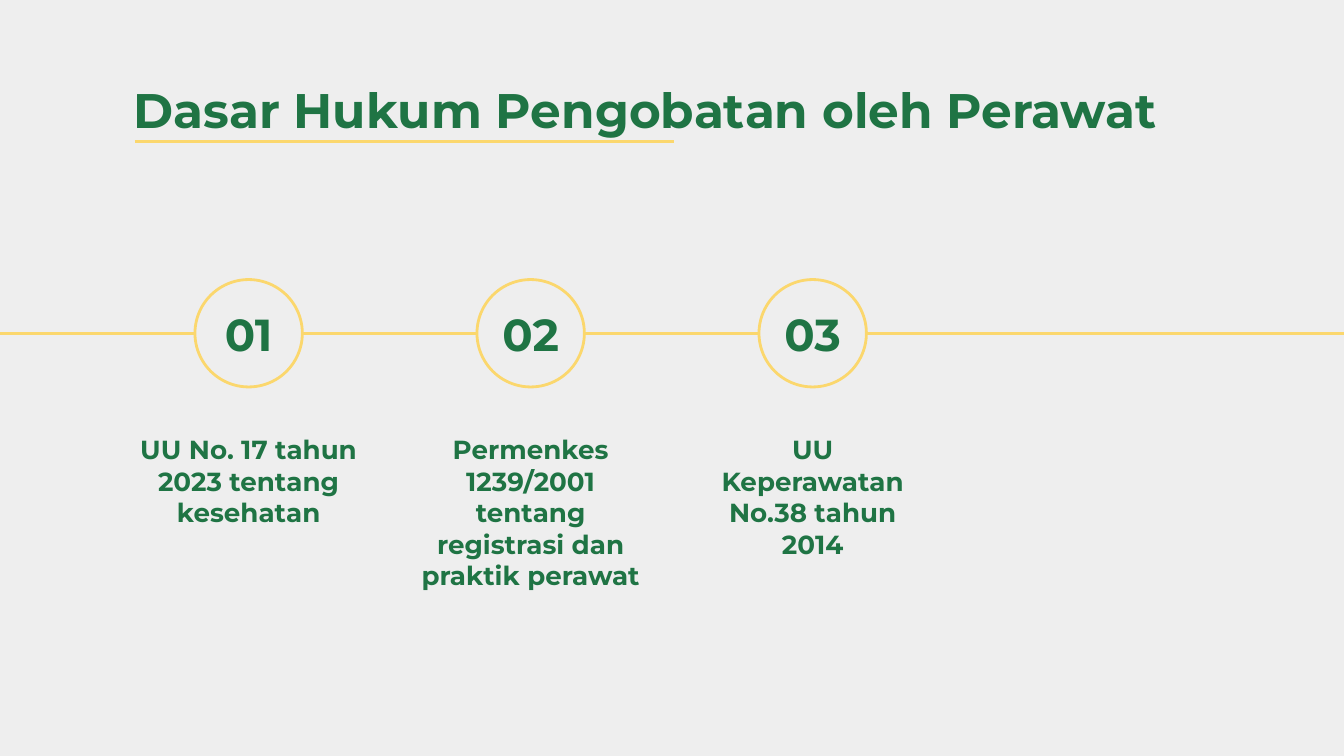
from pptx import Presentation
from pptx.dml.color import RGBColor
from pptx.enum.shapes import MSO_CONNECTOR, MSO_SHAPE
from pptx.enum.text import MSO_ANCHOR, PP_ALIGN
from pptx.oxml.ns import qn
from pptx.util import Cm, Pt
from lxml import etree

GREEN = RGBColor(0x1F, 0x74, 0x44)
YELLOW = RGBColor(0xFB, 0xD7, 0x6D)
GREY = RGBColor(0xEE, 0xEE, 0xEE)

FONT = "Montserrat"
LINE_WIDTH = Pt(1.5)
INSET = Cm(0.25)

# Timeline geometry in centimetres
TIMELINE_Y = 6.3
FIRST_CENTER = 4.7
STEP = 5.33
DIAMETER = 2.03
COLUMN_WIDTH = 4.7

LAWS = [
    "UU No. 17 tahun 2023 tentang kesehatan",
    "Permenkes 1239/2001 tentang registrasi dan praktik perawat",
    "UU Keperawatan No.38 tahun 2014",
]


def add_text(slide, text, left, top, width, height, *, size,
             align=PP_ALIGN.LEFT, anchor=MSO_ANCHOR.TOP):
    box = slide.shapes.add_textbox(Cm(left), Cm(top), Cm(width), Cm(height))
    frame = box.text_frame
    frame.word_wrap = True
    frame.vertical_anchor = anchor
    frame.margin_left = frame.margin_right = INSET
    frame.margin_top = frame.margin_bottom = INSET
    paragraph = frame.paragraphs[0]
    paragraph.alignment = align
    run = paragraph.add_run()
    run.text = text
    run.font.name = FONT
    run.font.size = Pt(size)
    run.font.bold = True
    run.font.color.rgb = GREEN


def add_rule(slide, start, end, y):
    rule = slide.shapes.add_connector(
        MSO_CONNECTOR.STRAIGHT, Cm(start), Cm(y), Cm(end), Cm(y))
    rule.line.color.rgb = YELLOW
    rule.line.width = LINE_WIDTH
    etree.SubElement(rule._element.spPr, qn("a:effectLst"))


def add_circle(slide, center):
    radius = DIAMETER / 2
    circle = slide.shapes.add_shape(
        MSO_SHAPE.OVAL, Cm(center - radius), Cm(TIMELINE_Y - radius),
        Cm(DIAMETER), Cm(DIAMETER))
    circle.shadow.inherit = False
    circle.fill.solid()
    circle.fill.fore_color.rgb = GREY
    circle.line.color.rgb = YELLOW
    circle.line.width = LINE_WIDTH


def add_milestone(slide, number, law):
    center = FIRST_CENTER + (number - 1) * STEP
    left = center - COLUMN_WIDTH / 2
    add_circle(slide, center)
    add_text(slide, f"{number:02d}", left, 5.61, COLUMN_WIDTH, 1.4,
             size=24, align=PP_ALIGN.CENTER, anchor=MSO_ANCHOR.MIDDLE)
    add_text(slide, law, left, 7.95, COLUMN_WIDTH, 1.6,
             size=14, align=PP_ALIGN.CENTER)


def main():
    presentation = Presentation()
    presentation.slide_width = Cm(25.4)
    presentation.slide_height = Cm(14.29)
    slide = presentation.slides.add_slide(presentation.slide_layouts[6])
    slide.background.fill.solid()
    slide.background.fill.fore_color.rgb = GREY

    # Title with underline
    add_text(slide, "Dasar Hukum Pengobatan oleh Perawat",
             2.27, 1.27, 20.85, 1.6, size=26)
    add_rule(slide, 2.55, 12.73, 2.67)

    # Timeline of laws
    add_rule(slide, 0, 25.4, TIMELINE_Y)
    for number, law in enumerate(LAWS, start=1):
        add_milestone(slide, number, law)

    presentation.save("out.pptx")


if __name__ == "__main__":
    main()
